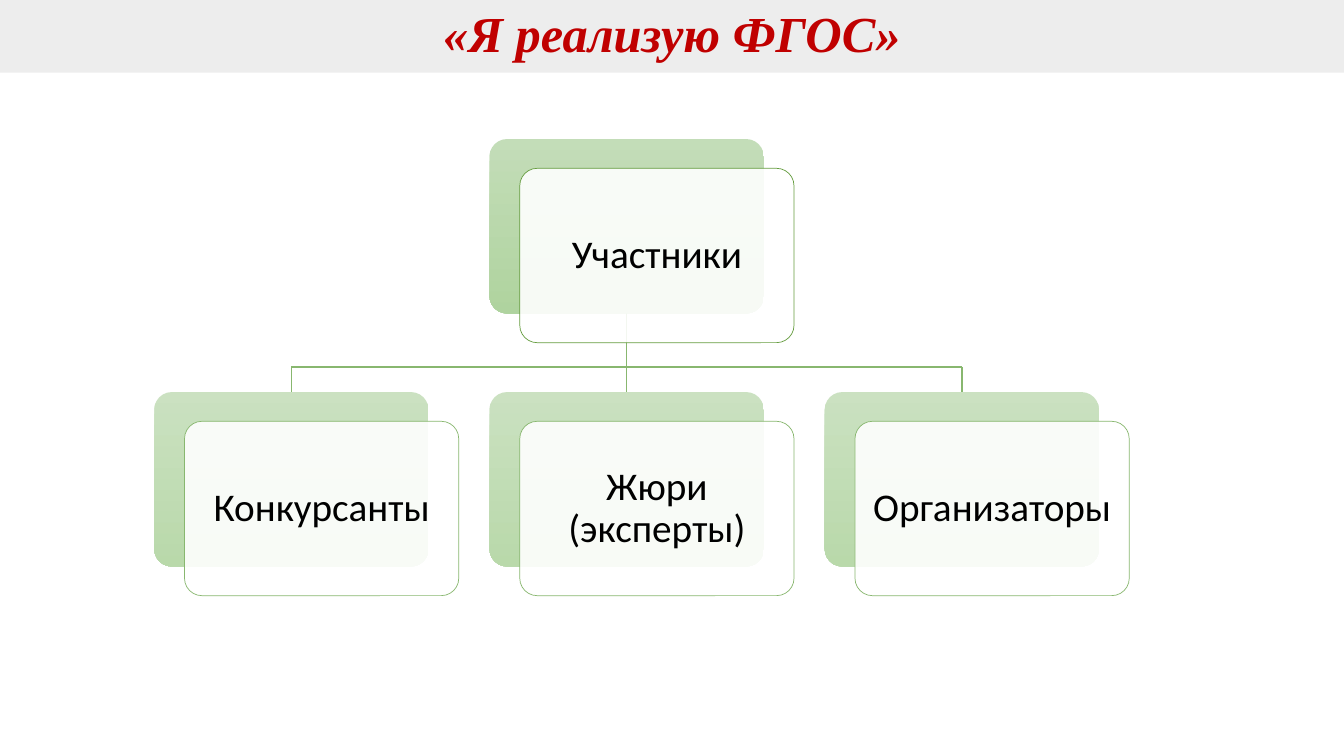
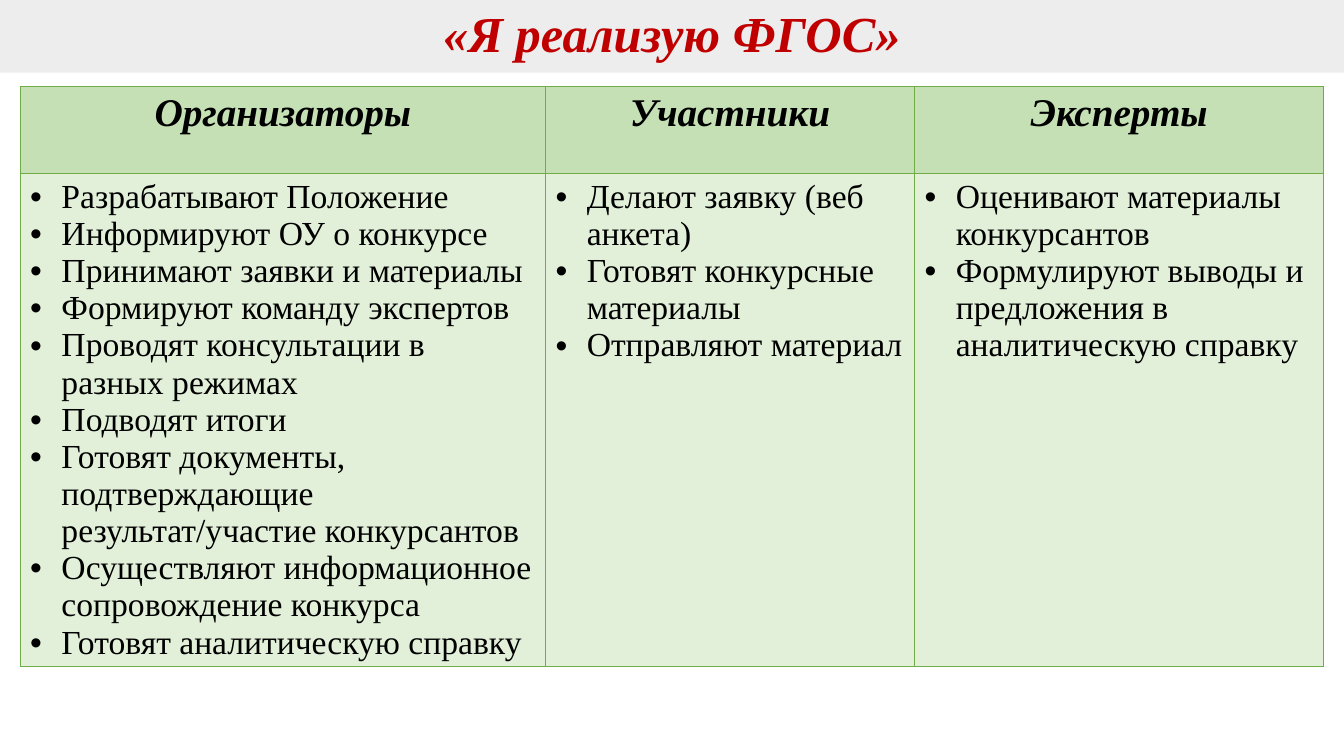
from lxml.etree import SubElement
from pptx import Presentation
from pptx.dml.color import RGBColor
from pptx.enum.shapes import MSO_CONNECTOR, MSO_SHAPE
from pptx.enum.text import MSO_ANCHOR, PP_ALIGN
from pptx.oxml.ns import qn
from pptx.util import Inches, Pt

COLORS = {
    "band": "EDEDED", "title": "C00000", "text": "000000", "white": "FFFFFF",
    "top": "B5D5A7", "base": "9CC987", "line": "88B76F", "root": "669D40",
    "head": "C5E0B4", "body": "E2F0D9", "grid": "70AD47",
}
SERIF, SANS = "Times New Roman", "Calibri"
TITLE = "«Я реализую ФГОС»"

CARD_W, CARD_H = 2.72, 1.73
SHIFT_X, SHIFT_Y = 0.3, 0.29
ROOT_Y, CHILD_Y, BAR_Y = 1.38, 3.89, 3.64
LEFT, STEP = 1.53, 3.325
ROOT = "Участники"
GROUPS = ["Конкурсанты", "Жюри (эксперты)", "Организаторы"]

WIDTHS = [5.21, 3.66, 4.06]
HEIGHTS = [0.86, 4.89]
DUTIES = {
    "Организаторы": [
        "Разрабатывают Положение",
        "Информируют ОУ о конкурсе",
        "Принимают заявки и материалы",
        "Формируют команду экспертов",
        "Проводят консультации в разных режимах",
        "Подводят итоги",
        "Готовят документы, подтверждающие результат/участие конкурсантов",
        "Осуществляют информационное сопровождение конкурса",
        "Готовят аналитическую справку",
    ],
    "Участники": [
        "Делают заявку (веб анкета)",
        "Готовят конкурсные материалы",
        "Отправляют материал",
    ],
    "Эксперты": [
        "Оценивают материалы конкурсантов",
        "Формулируют выводы и предложения в аналитическую справку",
    ],
}


def rgb(name):
    return RGBColor.from_string(COLORS[name])


def write(frame, lines, size=24, font=SERIF, color="text", strong=False,
          align=PP_ALIGN.LEFT, space=1.0, bullet=False):
    """Fill a text frame, one paragraph per line; strong is bold italic."""
    frame.word_wrap = True
    for i, line in enumerate(lines):
        para = frame.paragraphs[0] if i == 0 else frame.add_paragraph()
        para.alignment, para.line_spacing = align, space
        run = para.add_run()
        run.text = line
        run.font.name, run.font.size = font, Pt(size)
        run.font.bold = run.font.italic = strong
        run.font.color.rgb = rgb(color)
        if bullet:
            add_bullet(para)


def add_bullet(para):
    props = para._p.get_or_add_pPr()
    props.set("marL", str(Inches(0.31)))
    props.set("indent", str(Inches(-0.31)))
    SubElement(props, qn("a:buFont"), typeface="Arial")
    SubElement(props, qn("a:buChar"), char="•")


def add_box(slide, kind, x, y, w, h):
    box = slide.shapes.add_shape(kind, Inches(x), Inches(y), Inches(w), Inches(h))
    box.shadow.inherit = False
    box.line.fill.background()
    return box


def set_alpha(shape, share):
    """Give every fill colour of the shape this opacity, in percent."""
    for tag in ("a:solidFill", "a:gradFill"):
        for fill in shape._element.spPr.findall(qn(tag)):
            for color in fill.iter(qn("a:srgbClr")):
                SubElement(color, qn("a:alpha"), val=str(share * 1000))


def add_title(slide, wide):
    band = add_box(slide, MSO_SHAPE.RECTANGLE, 0, 0, wide, 0.72)
    band.fill.solid()
    band.fill.fore_color.rgb = rgb("band")
    band.text_frame.vertical_anchor = MSO_ANCHOR.MIDDLE
    write(band.text_frame, [TITLE], size=36, color="title", strong=True,
          align=PP_ALIGN.CENTER, space=0.9)


def add_card(slide, label, x, y, alpha=70, edge="line"):
    """Draw a tinted back plate with a labelled front plate set off from it."""
    back, front = (
        add_box(slide, MSO_SHAPE.ROUNDED_RECTANGLE, x + dx, y + dy, CARD_W, CARD_H)
        for dx, dy in ((0, 0), (SHIFT_X, SHIFT_Y)))
    back.adjustments[0] = front.adjustments[0] = 0.1
    back.fill.gradient()
    back.fill.gradient_angle = 270
    for stop, name in zip(back.fill.gradient_stops, ("top", "base")):
        stop.color.rgb = rgb(name)
    set_alpha(back, alpha)

    front.fill.solid()
    front.fill.fore_color.rgb = rgb("white")
    set_alpha(front, 90)
    front.line.color.rgb = rgb(edge)
    front.line.width = Pt(0.5)
    frame = front.text_frame
    frame.vertical_anchor = MSO_ANCHOR.MIDDLE
    frame.margin_left = frame.margin_right = Inches(0.12)
    frame.margin_top = frame.margin_bottom = Inches(0.12)
    write(frame, [label], size=28, font=SANS, align=PP_ALIGN.CENTER, space=0.9)


def add_line(slide, *ends):
    line = slide.shapes.add_connector(MSO_CONNECTOR.STRAIGHT, *map(Inches, ends))
    line.line.color.rgb = rgb("line")
    line.line.width = Pt(1)
    SubElement(line._element.spPr, qn("a:effectLst"))


def add_tree(slide):
    lefts = [LEFT + i * STEP for i in range(len(GROUPS))]
    mids = [x + CARD_W / 2 for x in lefts]
    add_line(slide, mids[1], ROOT_Y + CARD_H, mids[1], BAR_Y)
    add_line(slide, mids[0], BAR_Y, mids[-1], BAR_Y)
    for mid in mids:
        add_line(slide, mid, BAR_Y, mid, CHILD_Y)
    add_card(slide, ROOT, lefts[1], ROOT_Y, alpha=80, edge="root")
    for label, x in zip(GROUPS, lefts):
        add_card(slide, label, x, CHILD_Y)


def paint(cell, name):
    props = cell._tc.get_or_add_tcPr()
    for side in "LRTB":
        edge = SubElement(props, qn("a:ln" + side), w=str(Pt(1)))
        fill = SubElement(edge, qn("a:solidFill"))
        SubElement(fill, qn("a:srgbClr"), val=COLORS["grid"])
    cell.fill.solid()
    cell.fill.fore_color.rgb = rgb(name)


def add_duties(slide):
    table = slide.shapes.add_table(
        len(HEIGHTS), len(WIDTHS), Inches(0.2), Inches(0.86),
        Inches(sum(WIDTHS)), Inches(sum(HEIGHTS))).table
    table.first_row = table.horz_banding = False
    for row, high in zip(table.rows, HEIGHTS):
        row.height = Inches(high)
    for i, (role, tasks) in enumerate(DUTIES.items()):
        table.columns[i].width = Inches(WIDTHS[i])
        head, body = table.cell(0, i), table.cell(1, i)
        paint(head, "head")
        paint(body, "body")
        write(head.text_frame, [role], size=28, strong=True, align=PP_ALIGN.CENTER)
        write(body.text_frame, tasks, bullet=True)


def main():
    deck = Presentation()
    deck.slide_width, deck.slide_height = Inches(13.33), Inches(7.5)
    for build in (add_tree, add_duties):
        slide = deck.slides.add_slide(deck.slide_layouts[6])
        add_title(slide, 13.33)
        build(slide)
    deck.save("out.pptx")


if __name__ == "__main__":
    main()
